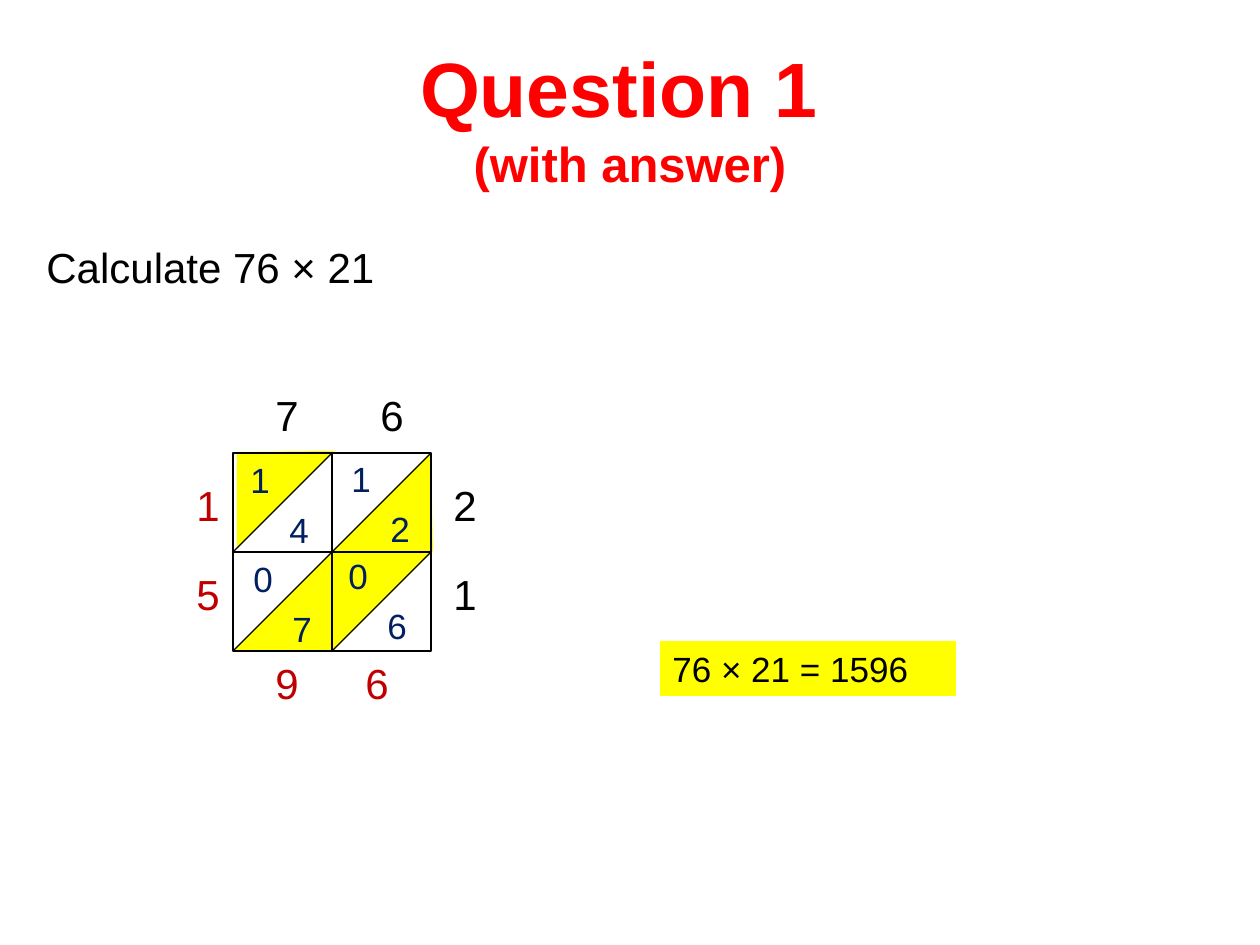
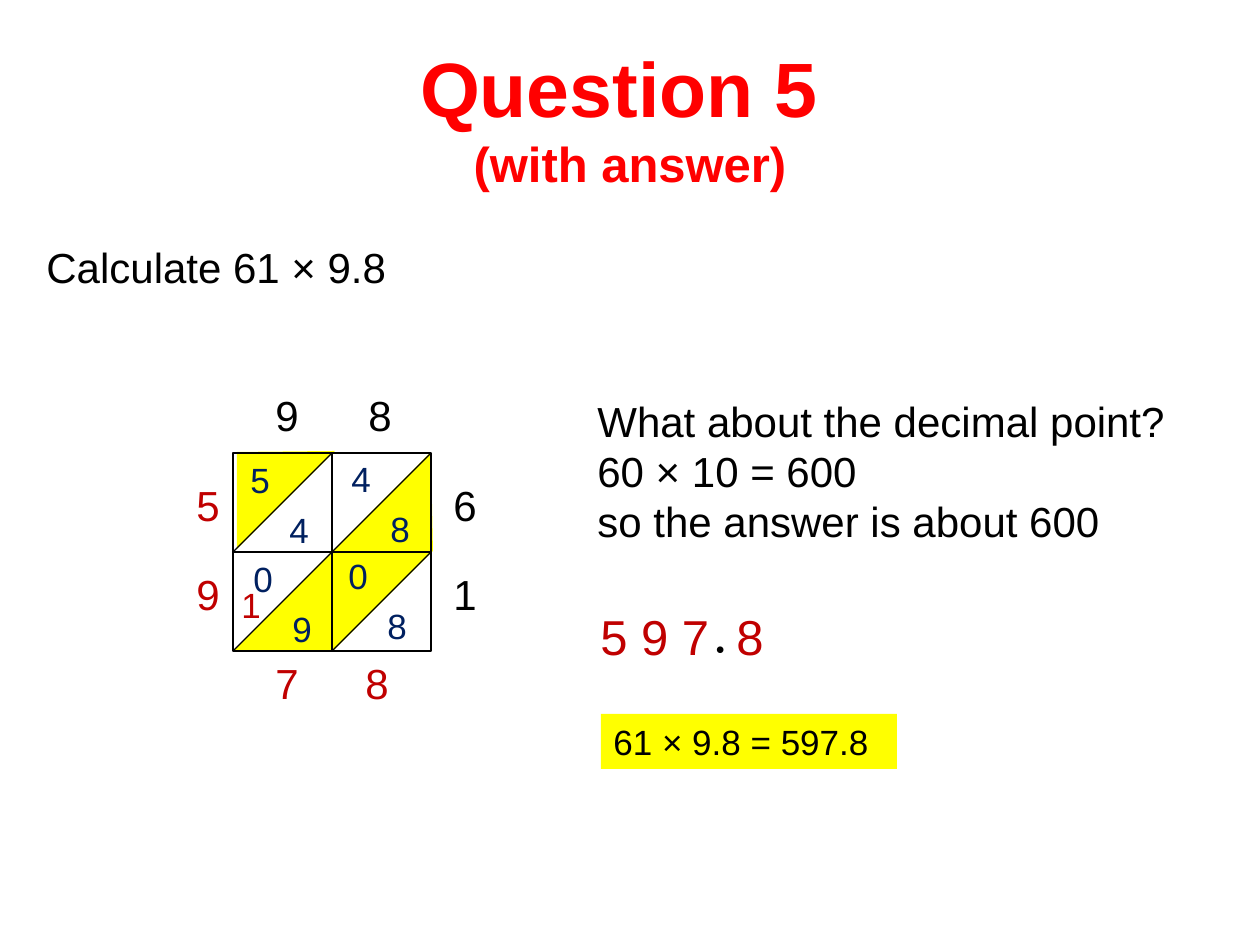
from lxml.etree import SubElement
from pptx import Presentation
from pptx.dml.color import RGBColor
from pptx.enum.shapes import MSO_CONNECTOR, MSO_SHAPE
from pptx.enum.text import MSO_ANCHOR, PP_ALIGN
from pptx.oxml.ns import qn
from pptx.util import Pt

PX = 914400 / 126
COLORS = {"title": "FF0000", "ink": "000000", "sum": "C00000", "product": "002060", "mark": "FFFF00"}
LEFT, TOP, CELL = 233, 453, 99
BANDS = [
    [(334, 650), (234, 650), (431, 452), (433, 551)],
    [(237, 549), (335, 451), (237, 452)],
]
PRODUCT_CORNERS = [(238, 452), (339, 451), (241, 551), (336, 548)]
ROW_TOPS = (473, 562)


def emu(px):
    return round(px * PX)


def color(name):
    return RGBColor.from_string(COLORS[name])


class Deck:
    """Builds lattice multiplication slides in one style."""

    def __init__(self):
        self.prs = Presentation()
        self.prs.slide_width, self.prs.slide_height = emu(1260), emu(945)

    def new_slide(self):
        self.shapes = self.prs.slides.add_slide(self.prs.slide_layouts[6]).shapes

    def title(self, heading, note):
        frame = self.shapes.add_textbox(*map(emu, (63, 38, 1134, 157))).text_frame
        frame.word_wrap = True
        frame.vertical_anchor = MSO_ANCHOR.MIDDLE
        paragraph = frame.paragraphs[0]
        paragraph.alignment = PP_ALIGN.CENTER
        self.style(paragraph, 44, "title")
        paragraph.font.bold = True
        first = paragraph.add_run()
        first.text = heading + " "
        first.font.size = Pt(44)
        paragraph.add_line_break()
        second = paragraph.add_run()
        second.text = note
        second.font.size = Pt(28)

    def style(self, paragraph, size, ink, face="Arial"):
        paragraph.font.name = face
        paragraph.font.size = Pt(size)
        paragraph.font.color.rgb = color(ink)

    def text(self, box, lines, size=24, ink="ink", fill=None, gap=0, indent=0, tab=0, face="Arial"):
        holder = self.shapes.add_textbox(*map(emu, box))
        if fill:
            holder.fill.solid()
            holder.fill.fore_color.rgb = color(fill)
        frame = holder.text_frame
        frame.word_wrap = True
        for index, line in enumerate(lines):
            paragraph = frame.add_paragraph() if index else frame.paragraphs[0]
            paragraph.text = line
            if index and gap:
                paragraph.space_before = Pt(gap)
            if index and indent:
                paragraph._p.get_or_add_pPr().set("marL", str(emu(indent)))
            if tab:
                stops = SubElement(paragraph._p.get_or_add_pPr(), qn("a:tabLst"))
                SubElement(stops, qn("a:tab"), pos=str(emu(tab)), algn="l")
            self.style(paragraph, size, ink, face)

    def band(self, points):
        builder = self.shapes.build_freeform(*map(emu, points[0]))
        builder.add_line_segments([(emu(x), emu(y)) for x, y in points[1:]])
        band = builder.convert_to_shape()
        band.shadow.inherit = False
        band.fill.solid()
        band.fill.fore_color.rgb = color("mark")
        band.line.fill.background()

    def cell(self, x, y):
        square = self.shapes.add_shape(MSO_SHAPE.RECTANGLE, *map(emu, (x, y, CELL, CELL)))
        square.shadow.inherit = False
        square.fill.background()
        diagonal = self.shapes.add_connector(
            MSO_CONNECTOR.STRAIGHT, *map(emu, (x, y + CELL, x + CELL, y)))
        SubElement(diagonal._element.spPr, qn("a:effectLst"))
        for edge in (square.line, diagonal.line):
            edge.color.rgb = color("ink")
            edge.width = Pt(0.75)

    def lattice(self, across, across_tab, down, products, left_sums, bottom_sums):
        for points in BANDS:
            self.band(points)
        for row in range(2):
            for column in range(2):
                self.cell(LEFT + column * CELL, TOP + row * CELL)
        self.text((263, 383, 169, 63), [across], tab=across_tab)
        for y, factor, total in zip(ROW_TOPS, down, left_sums):
            self.text((441, y, 49, 63), [factor])
            self.text((184, y, 49, 63), [total], ink="sum")
        for x, total in zip((263, 353), bottom_sums):
            self.text((x, 651, 49, 63), [total], ink="sum")
        for (x, y), digits in zip(PRODUCT_CORNERS, products):
            self.text((x, y, 89, 106), digits, 20, "product", gap=4.8, indent=39)

    def question(self, number, task, answer, answer_corner, **lattice):
        self.new_slide()
        self.title(f"Question {number}", "(with answer)")
        self.text((34, 235, 1191, 63), [f"Calculate {task}"])
        self.lattice(**lattice)
        self.text((*answer_corner, 296, 55), [f"{task} = {answer}"], 20, fill="mark")


def main():
    deck = Deck()
    deck.question(1, "76 × 21", "1596", (660, 641), across="7\t6", across_tab=105, down="21",
                  products=["14", "12", "07", "06"], left_sums="15", bottom_sums="96")
    deck.question(5, "61 × 9.8", "597.8", (601, 714), across="9\t8", across_tab=93, down="61",
                  products=["54", "48", "09", "08"], left_sums="59", bottom_sums="78")
    deck.text((585, 389, 599, 165),
              ["What about the decimal point?", "60 × 10 = 600", "so the answer is about 600"])
    deck.text((588, 600, 271, 72), ["5 9 7\t8"], 28, "sum", tab=136)
    deck.text((703, 625, 39, 47), ["•"], 16, face="Times New Roman")
    deck.text((229, 577, 45, 55), ["1"], 20, "sum")
    deck.prs.save("out.pptx")


if __name__ == "__main__":
    main()
